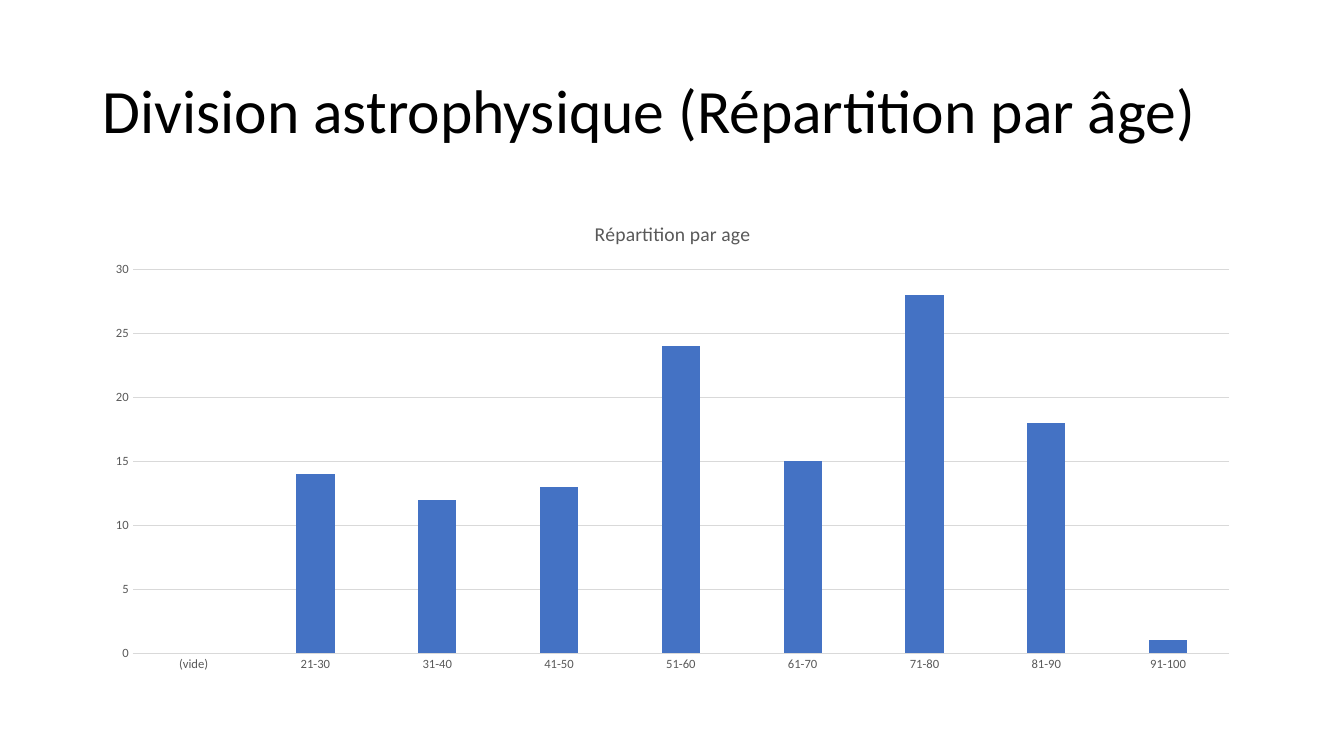
"""Build a slide with a column chart of the astrophysics division by age."""
from dataclasses import dataclass

from pptx import Presentation
from pptx.chart.data import CategoryChartData
from pptx.dml.color import RGBColor
from pptx.enum.chart import XL_CHART_TYPE, XL_TICK_MARK
from pptx.enum.text import MSO_ANCHOR
from pptx.util import Inches, Pt


@dataclass(frozen=True)
class Theme:
    font: str = "Calibri"
    black: str = "000000"
    gray: str = "595959"
    rule: str = "D9D9D9"
    bar: str = "4472C4"
    title: int = 44
    chart_title: int = 14
    chart: int = 10
    axis: int = 9
    rule_width: float = 0.75


theme = Theme()


def write_text(tf, text, size, color, line_spacing=None):
    p = tf.paragraphs[0]
    p.line_spacing = line_spacing
    r = p.add_run()
    r.text = text
    r.font.name = theme.font
    r.font.size = Pt(size)
    r.font.bold = False
    r.font.color.rgb = RGBColor.from_string(color)


def style_line(line):
    line.color.rgb = RGBColor.from_string(theme.rule)
    line.width = Pt(theme.rule_width)


prs = Presentation()
prs.slide_width, prs.slide_height = Inches(13.33), Inches(7.5)
s = prs.slides.add_slide(prs.slide_layouts[6])

left, width = Inches(0.92), Inches(11.5)
tf = s.shapes.add_textbox(left, Inches(0.4), width, Inches(1.45)).text_frame
tf.word_wrap = True
tf.vertical_anchor = MSO_ANCHOR.MIDDLE
write_text(tf, "Division astrophysique (Répartition par âge)",
           size=theme.title, color=theme.black, line_spacing=0.9)

counts = {
    "(vide)": None,
    "21-30": 14,
    "31-40": 12,
    "41-50": 13,
    "51-60": 24,
    "61-70": 15,
    "71-80": 28,
    "81-90": 18,
    "91-100": 1,
}
data = CategoryChartData()
data.categories = list(counts)
data.add_series("Series 1", list(counts.values()))
chart = s.shapes.add_chart(XL_CHART_TYPE.COLUMN_CLUSTERED, left, Inches(2),
                           width, Inches(4.76), data).chart
chart.has_legend = False
chart.font.name = theme.font
chart.font.size = Pt(theme.chart)
chart.font.color.rgb = RGBColor.from_string(theme.black)
chart.has_title = True
chart.chart_title.include_in_layout = False
write_text(chart.chart_title.text_frame, "Répartition par age",
           size=theme.chart_title, color=theme.gray)

plot = chart.plots[0]
plot.gap_width, plot.overlap = 219, -27
plot.vary_by_categories = False
fill = plot.series[0].format.fill
fill.solid()
fill.fore_color.rgb = RGBColor.from_string(theme.bar)

for axis in (chart.category_axis, chart.value_axis):
    axis.major_tick_mark = axis.minor_tick_mark = XL_TICK_MARK.NONE
    font = axis.tick_labels.font
    font.name = theme.font
    font.size = Pt(theme.axis)
    font.color.rgb = RGBColor.from_string(theme.gray)

style_line(chart.category_axis.format.line)
chart.value_axis.format.line.fill.background()
chart.value_axis.minimum_scale = 0
chart.value_axis.maximum_scale = 30
chart.value_axis.major_unit = 5
chart.value_axis.has_major_gridlines = True
style_line(chart.value_axis.major_gridlines.format.line)

prs.save("out.pptx")
